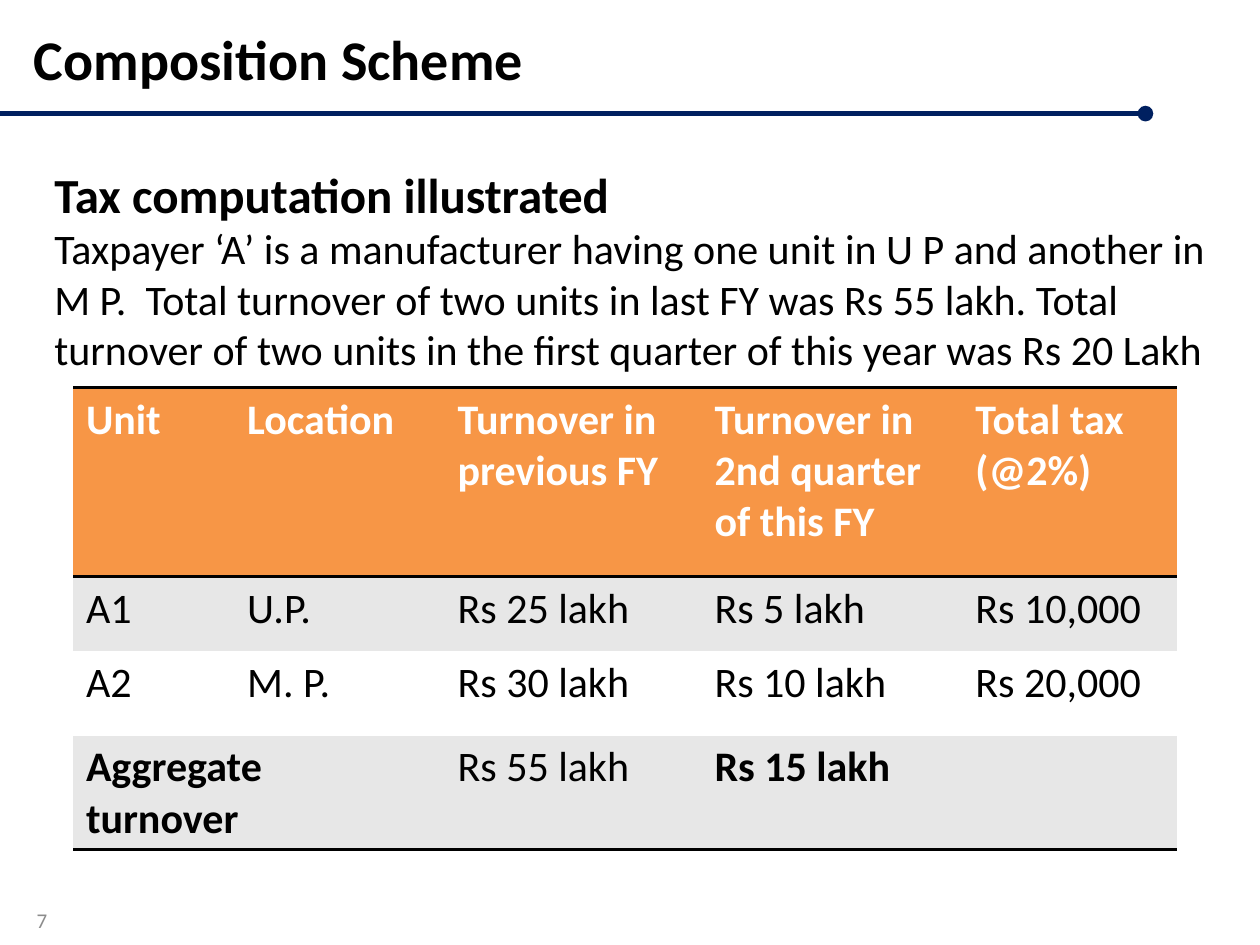
import pptx
import pptx.util
import pptx.dml.color
import pptx.enum.shapes
import pptx.enum.text
import pptx.oxml
import pptx.oxml.ns

Cm = pptx.util.Cm
Pt = pptx.util.Pt
RGBColor = pptx.dml.color.RGBColor

# Content
TITLE = "Composition Scheme"
HEADING = "Tax computation illustrated"
EXAMPLE = (
    "Taxpayer ‘A’ is a manufacturer having one unit in U P and another in M P.  "
    "Total turnover of two units in last FY was Rs 55 lakh. "
    "Total turnover of two units in the first quarter of this year was Rs 20 Lakh"
)
TAX_ROWS = [
    ["Unit", "Location", "Turnover in previous FY",
     "Turnover in 2nd quarter of this FY", "Total tax (@2%)"],
    ["A1", "U.P.", "Rs 25 lakh", "Rs 5 lakh", "Rs 10,000"],
    ["A2", "M. P.", "Rs 30 lakh", "Rs 10 lakh", "Rs 20,000"],
    ["Aggregate  turnover", "", "Rs 55 lakh", "Rs 15 lakh", ""],
]
BOLD_TOTALS = ("Aggregate  turnover", "Rs 15 lakh")
PAGE_NUMBER = "7"

# Layout in centimetres
COLUMN_WIDTHS = [3.25, 4.24, 5.18, 5.26, 4.32]
ROW_HEIGHTS = [3.81, 1.5, 1.7, 2.11]

# Style
FONT = "Calibri"
NO_GRID_STYLE = "{2D5ABB26-0587-4C30-8999-92F81FD0307C}"
BLACK = RGBColor(0x00, 0x00, 0x00)
WHITE = RGBColor(0xFF, 0xFF, 0xFF)
NAVY = RGBColor(0x00, 0x20, 0x60)
ORANGE = RGBColor(0xF7, 0x96, 0x46)
BAND_GRAY = RGBColor(0xE7, 0xE7, 0xE7)
NUMBER_GRAY = RGBColor(0x8C, 0x8C, 0x8C)
ROW_FILLS = [ORANGE, BAND_GRAY, WHITE, BAND_GRAY]


def place(shape, left, top, width, height):
    shape.left, shape.top = Cm(left), Cm(top)
    shape.width, shape.height = Cm(width), Cm(height)


def style(paragraph, size, color=BLACK, bold=False):
    for run in paragraph.runs:
        run.font.name = FONT
        run.font.size = Pt(size)
        run.font.bold = bold
        run.font.color.rgb = color


def add_cell_rule(cell, side, position):
    """Draw a 2 pt black rule on one side of a cell."""
    rule = pptx.oxml.parse_xml(
        f'<a:{side} {pptx.oxml.ns.nsdecls("a")} w="{Pt(2)}"><a:solidFill>'
        f'<a:srgbClr val="{BLACK}"/></a:solidFill></a:{side}>')
    cell._tc.get_or_add_tcPr().insert(position, rule)


prs = pptx.Presentation()
prs.slide_width, prs.slide_height = Cm(25.4), Cm(19.05)
slide = prs.slides.add_slide(prs.slide_layouts[1])

# Rule under the title, ending in a dot
title_rule = slide.shapes.add_connector(
    pptx.enum.shapes.MSO_CONNECTOR.STRAIGHT, Cm(0), Cm(2.29), Cm(23.09), Cm(2.29))
title_rule.line.color.rgb = NAVY
title_rule.line.width = Pt(3)
title_rule.line._get_or_add_ln().append(pptx.oxml.parse_xml(
    f'<a:tailEnd {pptx.oxml.ns.nsdecls("a")} type="oval"/>'))
title_rule._element.spPr.append(pptx.oxml.parse_xml(
    f'<a:effectLst {pptx.oxml.ns.nsdecls("a")}/>'))

# Title and worked example
title = slide.shapes.title
example = slide.placeholders[1]
place(title, 0.43, 0.36, 21.11, 1.63)
place(example, 0.84, 3.18, 24.13, 4.52)
title.text_frame.text = TITLE
example.text_frame.text = f"{HEADING}\n{EXAMPLE}"
for part, sizes in ((title, [32]), (example, [28, 24])):
    frame = part.text_frame
    frame.word_wrap = True
    frame.auto_size = pptx.enum.text.MSO_AUTO_SIZE.SHAPE_TO_FIT_TEXT
    frame.vertical_anchor = pptx.enum.text.MSO_ANCHOR.TOP
    for paragraph, size in zip(frame.paragraphs, sizes):
        properties = paragraph._p.get_or_add_pPr()
        properties.set("marL", "0")
        properties.set("indent", "0")
        properties.append(pptx.oxml.parse_xml(
            f'<a:buNone {pptx.oxml.ns.nsdecls("a")}/>'))
        paragraph.alignment = pptx.enum.text.PP_ALIGN.LEFT
        paragraph.space_before = Pt(0)
        style(paragraph, size, bold=size > 24)

# Tax table
tax_frame = slide.shapes.add_table(
    len(TAX_ROWS), len(COLUMN_WIDTHS), Cm(1.48), Cm(7.82),
    Cm(sum(COLUMN_WIDTHS)), Cm(sum(ROW_HEIGHTS)))
tax_table = tax_frame.table
tax_table._tbl.tblPr.find(pptx.oxml.ns.qn("a:tableStyleId")).text = NO_GRID_STYLE
for column, width in zip(tax_table.columns, COLUMN_WIDTHS):
    column.width = Cm(width)
for row, height in zip(tax_table.rows, ROW_HEIGHTS):
    row.height = Cm(height)

last = len(TAX_ROWS) - 1
for r, values in enumerate(TAX_ROWS):
    for c, value in enumerate(values):
        cell = tax_table.cell(r, c)
        cell.fill.solid()
        cell.fill.fore_color.rgb = ROW_FILLS[r]
        cell.text_frame.text = value
        style(cell.text_frame.paragraphs[0], 24, WHITE if r == 0 else BLACK,
              r == 0 or value in BOLD_TOTALS)
        if r in (0, last):
            add_cell_rule(cell, "lnB", 0)
        if r == 0:
            add_cell_rule(cell, "lnT", 0)
tax_table.cell(last, 0).merge(tax_table.cell(last, 1))

# Page number
page_number = slide.shapes.add_textbox(Cm(-4.52), Cm(18.03), Cm(5.72), Cm(1.02))
page_number.text_frame.word_wrap = True
page_number.text_frame.vertical_anchor = pptx.enum.text.MSO_ANCHOR.MIDDLE
page_number.text_frame.text = PAGE_NUMBER
number_line = page_number.text_frame.paragraphs[0]
number_line.alignment = pptx.enum.text.PP_ALIGN.RIGHT
style(number_line, 12, NUMBER_GRAY)

prs.save("out.pptx")
